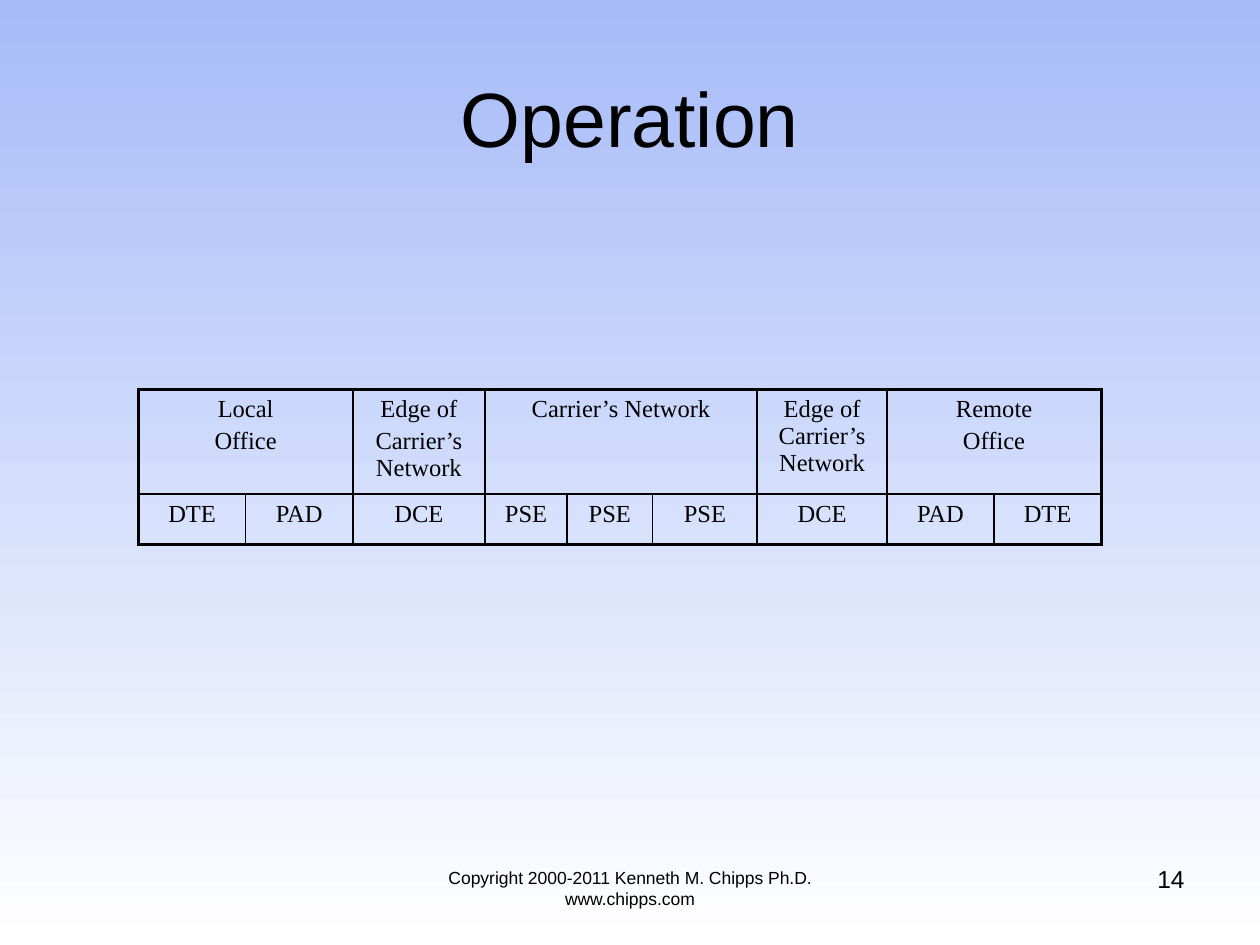
from pptx import Presentation
from pptx.dml.color import RGBColor
from pptx.enum.text import MSO_ANCHOR, PP_ALIGN as Align
from pptx.oxml.ns import qn
from pptx.util import Inches, Pt
from lxml.etree import SubElement

BLACK = RGBColor(0x00, 0x00, 0x00)
SKY = RGBColor(0xA6, 0xBB, 0xF8)
WHITE = RGBColor(0xFF, 0xFF, 0xFF)

COLUMN_WIDTHS = [0.85, 0.85, 1.05, 0.65, 0.68, 0.83, 1.03, 0.85, 0.85]
ROW_HEIGHTS = [0.83, 0.4]
LOCATIONS = [
    ("Local\nOffice", 2),
    ("Edge of\nCarrier’s Network", 1),
    ("Carrier’s Network", 3),
    ("Edge of Carrier’s Network", 1),
    ("Remote\nOffice", 2),
]
DEVICES = ["DTE", "PAD", "DCE", "PSE", "PSE", "PSE", "DCE", "PAD", "DTE"]


class SlideBuilder:
    sans = "Arial"
    serif = "Times New Roman"
    outer_line = Pt(2.25)
    inner_line = Pt(1)

    def __init__(self, slide):
        self.slide = slide

    def background(self, top, bottom):
        fill = self.slide.background.fill
        fill.gradient()
        fill.gradient_angle = 270
        for stop, color, position in zip(fill.gradient_stops, (top, bottom), (0, 1)):
            stop.color.rgb = color
            stop.position = position

    def style(self, frame, size, font, align):
        for index, paragraph in enumerate(frame.paragraphs):
            paragraph.alignment = align
            paragraph.space_before = Pt(0.2 * size if index else 0)
            paragraph.font.size = Pt(size)
            paragraph.font.name = font
            paragraph.font.color.rgb = BLACK

    def title(self, text, left, top, width, height):
        title = self.slide.shapes.title
        title.left, title.top = Inches(left), Inches(top)
        title.width, title.height = Inches(width), Inches(height)
        title.text_frame.text = text
        title.text_frame.vertical_anchor = MSO_ANCHOR.MIDDLE
        self.style(title.text_frame, 44, self.sans, Align.CENTER)

    def text(self, text, left, top, width, height, size, align):
        box = self.slide.shapes.add_textbox(
            Inches(left), Inches(top), Inches(width), Inches(height))
        box.text_frame.word_wrap = True
        box.text_frame.text = text
        self.style(box.text_frame, size, self.sans, align)

    def border(self, cell, side, width):
        properties = cell._tc.get_or_add_tcPr()
        line = SubElement(properties, qn(f"a:ln{side}"), w=str(width))
        fill = SubElement(line, qn("a:solidFill"))
        SubElement(fill, qn("a:srgbClr"), val=str(BLACK))

    def network_table(self, left, top):
        rows, columns = len(ROW_HEIGHTS), len(COLUMN_WIDTHS)
        table = self.slide.shapes.add_table(
            rows, columns, Inches(left), Inches(top),
            Inches(sum(COLUMN_WIDTHS)), Inches(sum(ROW_HEIGHTS))).table
        table.first_row = table.horz_banding = False
        for column, width in zip(table.columns, COLUMN_WIDTHS):
            column.width = Inches(width)
        for row, height in zip(table.rows, ROW_HEIGHTS):
            row.height = Inches(height)

        start = 0
        for location, span in LOCATIONS:
            cell = table.cell(0, start)
            if span > 1:
                cell.merge(table.cell(0, start + span - 1))
            cell.text = location
            start += span
        for column, device in enumerate(DEVICES):
            table.cell(1, column).text = device

        for row in range(rows):
            for column in range(columns):
                cell = table.cell(row, column)
                span = cell.span_width if cell.is_merge_origin else 1
                outer_sides = {
                    "L": column == 0,
                    "R": column + span == columns,
                    "T": row == 0,
                    "B": row == rows - 1,
                }
                for side, is_outer in outer_sides.items():
                    self.border(cell, side, self.outer_line if is_outer else self.inner_line)
                cell.fill.background()
                self.style(cell.text_frame, 14, self.serif, Align.CENTER)


def main():
    deck = Presentation()
    deck.slide_width, deck.slide_height = Inches(10), Inches(7.5)
    builder = SlideBuilder(deck.slides.add_slide(deck.slide_layouts[5]))
    builder.background(SKY, WHITE)
    builder.title("Operation", 0.5, 0.3, 9, 1.25)
    builder.network_table(1.1, 3.09)
    builder.text("Copyright 2000-2011 Kenneth M. Chipps Ph.D. www.chipps.com",
                 3, 6.83, 4, 0.52, 10, Align.CENTER)
    builder.text("14", 7.17, 6.81, 2.33, 0.52, 14, Align.RIGHT)
    deck.save("out.pptx")


if __name__ == "__main__":
    main()
